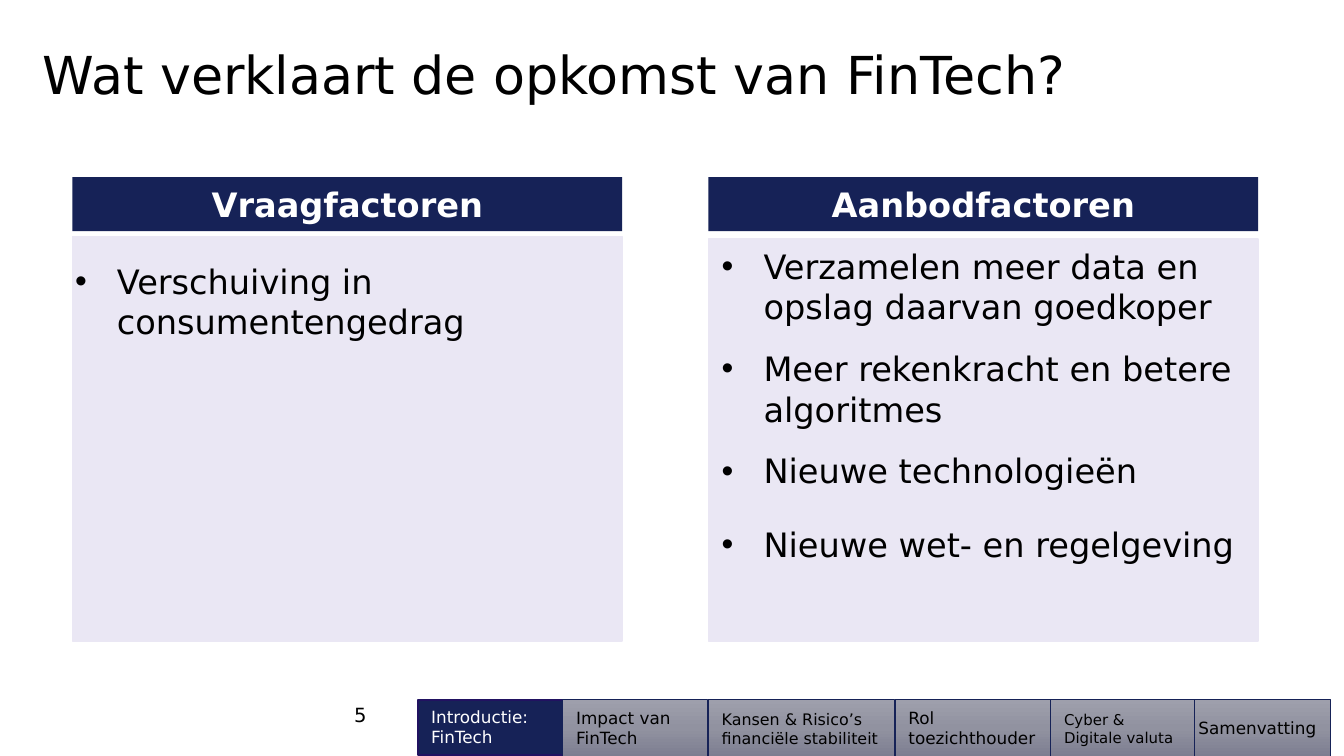
from copy import deepcopy

from pptx import Presentation
from pptx.dml.color import RGBColor
from pptx.enum.shapes import MSO_SHAPE
from pptx.enum.text import MSO_ANCHOR, MSO_AUTO_SIZE, PP_ALIGN
from pptx.oxml.ns import qn
from pptx.util import Cm, Pt

RECT = MSO_SHAPE.RECTANGLE
LEFT, CENTER = PP_ALIGN.LEFT, PP_ALIGN.CENTER
TOP, MIDDLE = MSO_ANCHOR.TOP, MSO_ANCHOR.MIDDLE
FIXED = MSO_AUTO_SIZE.NONE

FONT = "DejaVu Sans"
NAVY, LILAC, BLACK, WHITE = "162257", "EAE7F4", "000000", "FFFFFF"
SHADES = [(0, "9E9FAC"), (0.5, "9192A0"), (1, "7D7E91")]


def color(code):
    return RGBColor.from_string(code)


def write(frame, *lines, size=18, ink=BLACK, bold=False, align=LEFT,
          anchor=TOP, inset=(0.25, 0.13), pitch=1.0, gaps=None, hang=None):
    """Fill a text frame, one paragraph per line."""
    frame.word_wrap = True
    frame.auto_size = FIXED
    frame.vertical_anchor = anchor
    frame.margin_left = frame.margin_right = Cm(inset[0])
    frame.margin_top = frame.margin_bottom = Cm(inset[1])
    for i, line in enumerate(lines):
        para = frame.paragraphs[0] if i == 0 else frame.add_paragraph()
        if hang:
            props = para._p.get_or_add_pPr()
            props.set("marL", str(Cm(hang)))
            props.set("indent", str(-Cm(hang)))
            mark = props.makeelement(qn("a:buChar"), {"char": "•"})
            props.append(mark)
        para.alignment = align
        para.line_spacing = pitch
        para.space_before = Pt(gaps[i] if gaps else 0)
        run = para.add_run()
        run.text = line
        font = run.font
        font.name, font.size, font.bold = FONT, Pt(size), bold
        font.color.rgb = color(ink)


class Deck:
    """Holds the current slide and draws its elements."""

    def __init__(self):
        self.show = Presentation()
        self.show.slide_width, self.show.slide_height = Cm(25.4), Cm(14.29)
        self.slide = self.show.slides.add_slide(self.show.slide_layouts[3])
        self.shapes = self.slide.shapes

    def place(self, shape, box):
        shape.left, shape.top, shape.width, shape.height = map(Cm, box)

    def title(self, text, box):
        self.place(self.shapes.title, box)
        write(self.shapes.title.text_frame, text, size=28, anchor=MIDDLE,
              inset=(0, 0), pitch=Pt(35))

    def bullets(self, slot, lines, box, gaps):
        body = self.slide.placeholders[slot]
        self.place(body, box)
        self.shapes._spTree.append(body._element)  # bring above its panel
        write(body.text_frame, *lines, gaps=gaps, hang=0.79)

    def label(self, text, box, **style):
        area = self.shapes.add_textbox(*map(Cm, box))
        write(area.text_frame, text, **style)

    def block(self, box, fill=None, edge=None, width=0.5, text=None, **style):
        """Draw a rectangle; without a fill it gets the grey gradient."""
        shape = self.shapes.add_shape(RECT, *map(Cm, box))
        shape.shadow.inherit = False
        if fill:
            shape.fill.solid()
            shape.fill.fore_color.rgb = color(fill)
        else:
            self.shade(shape)
        if edge:
            shape.line.color.rgb = color(edge)
            shape.line.width = Pt(width)
        else:
            shape.line.fill.background()
        if text:
            write(shape.text_frame, text, **style)

    def shade(self, shape):
        shape.fill.gradient()
        shape.fill.gradient_angle = 270
        stops = shape._element.spPr.find(".//" + qn("a:gsLst"))
        stops.append(deepcopy(stops[-1]))
        for stop, (spot, code) in zip(shape.fill.gradient_stops, SHADES):
            stop.position = spot
            stop.color.rgb = color(code)


def main():
    deck = Deck()
    deck.title("Wat verklaart de opkomst van FinTech?",
               (0.81, 0.66, 23.8, 1.4))
    deck.label("5", (5.97, 13.28, 1.68, 0.51), size=10.5, align=CENTER,
               inset=(0, 0))

    # Navigation bar: left, width, text size, text
    deck.block((7.9, 13.23, 2.74, 1.04), NAVY, "211261", 0.75,
               "Introductie: FinTech", size=9, ink=WHITE)
    tabs = [
        (10.64, 2.74, 9, "Impact van FinTech"),
        (13.39, 3.51, 8.5, "Kansen & Risico’s financiële stabiliteit"),
        (16.92, 2.95, 9, "Rol toezichthouder"),
        (22.4, 2.74, 9, "Samenvatting"),
        (19.86, 2.72, 8, "Cyber & Digitale valuta"),
    ]
    for left, width, size, text in tabs:
        deck.block((left, 13.23, width, 1.07), edge=NAVY, text=text,
                   size=size, anchor=MIDDLE)

    # Two columns: heading above a panel
    wide, base = 10.39, 12.12
    for left, top, head in [(1.37, 4.47, "Vraagfactoren"),
                            (13.39, 4.52, "Aanbodfactoren")]:
        deck.block((left, 3.35, wide, 1.02), NAVY, text=head, ink=WHITE,
                   bold=True, align=CENTER)
        deck.block((left, top, wide, base - top), LILAC, LILAC, 1)

    # Bullet lists
    deck.bullets(1, ["Verschuiving in consumentengedrag"],
                 (1.17, 4.8, 9.47, 1.8), [0])
    deck.bullets(2, ["Verzamelen meer data en opslag daarvan goedkoper",
                     "Meer rekenkracht en betere algoritmes",
                     "Nieuwe technologieën",
                     "Nieuwe wet- en regelgeving"],
                 (13.39, 4.52, wide, 6.22), [0, 11.5, 11.5, 18])

    deck.show.save("out.pptx")


if __name__ == "__main__":
    main()
